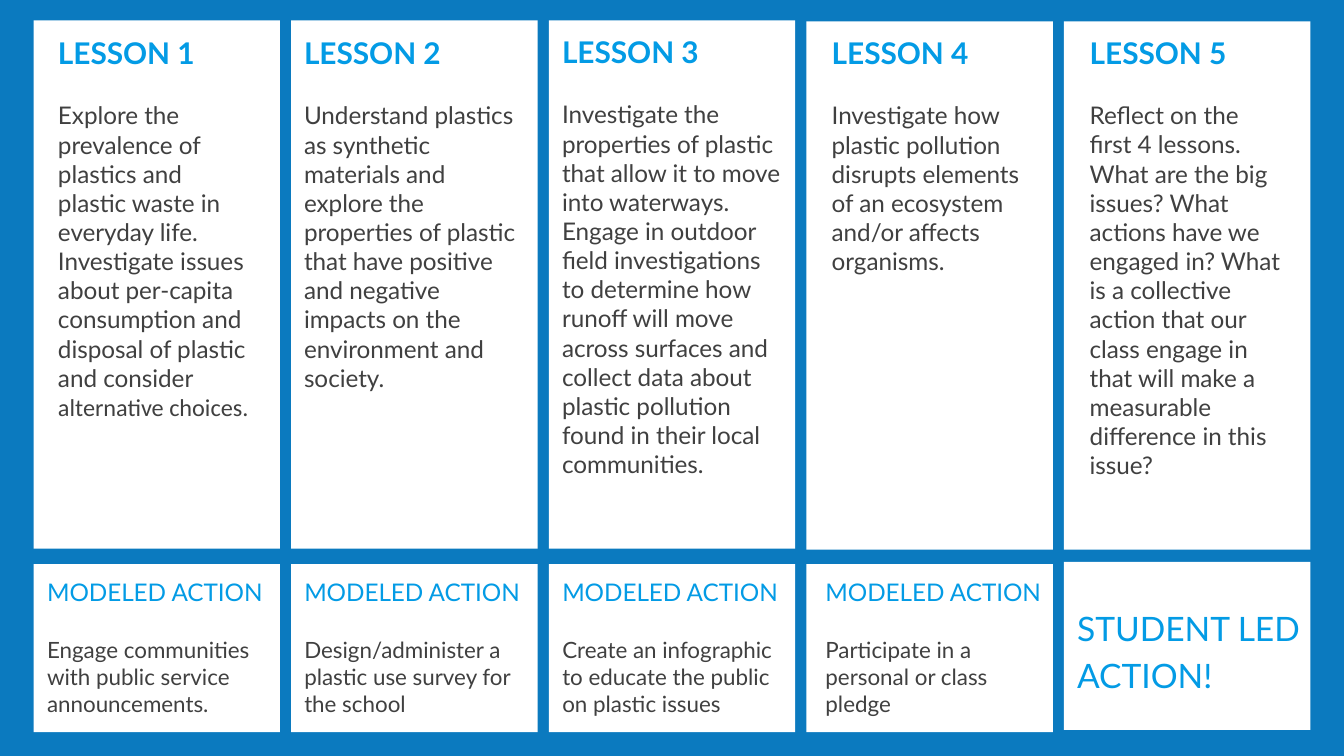
from lxml.etree import SubElement
from pptx import Presentation
from pptx.dml.color import RGBColor
from pptx.enum.shapes import MSO_SHAPE
from pptx.enum.text import MSO_ANCHOR, MSO_AUTO_SIZE, PP_ALIGN
from pptx.oxml.ns import qn
from pptx.util import Pt

theme = {
    "back": RGBColor.from_string("0B7ABF"),
    "card": RGBColor.from_string("FFFFFF"),
    "head": RGBColor.from_string("039BE5"),
    "body": RGBColor.from_string("404040"),
    "font": "Lato",
    "alt": "Calibri",
    "lesson": 16,
    "text": 13,
    "action": 13,
    "note": 12,
    "call": 18,
}
frame_look = {
    "word_wrap": True,
    "auto_size": MSO_AUTO_SIZE.NONE,
    "vertical_anchor": MSO_ANCHOR.TOP,
    **{f"margin_{side}": Pt(7.2) for side in ("left", "top", "right", "bottom")},
}
edges = ("left", "top", "width", "height")


def place(shape, box):
    for edge, size in zip(edges, box):
        setattr(shape, edge, Pt(size))


def write(shape, box, lines):
    place(shape, box)
    tree.append(shape._element)
    frame = shape.text_frame
    for name, value in frame_look.items():
        setattr(frame, name, value)
    for i, (runs, size, tone, bold, gap, lead) in enumerate(lines):
        para = frame.add_paragraph() if i else frame.paragraphs[0]
        look = {"alignment": PP_ALIGN.LEFT, "line_spacing": lead,
                "space_before": Pt(gap), "space_after": Pt(gap)}
        for name, value in look.items():
            setattr(para, name, value)
        props = para._p.get_or_add_pPr()
        props.set("marL", "0")
        props.set("indent", "0")
        SubElement(props, qn("a:buNone"))
        for text, face in runs:
            run = para.add_run()
            run.text = text
            look = {"name": theme[face], "size": Pt(theme[size]), "bold": bold}
            for name, value in look.items():
                setattr(run.font, name, value)
            run.font.color.rgb = theme[tone]


lessons = [
    ((24, 11.5, 119.5, 220), [
        ("Explore the prevalence of plastics and plastic waste in everyday life. "
         "Investigate issues about per-capita consumption and disposal of plastic "
         "and consider ", "font"),
        ("alternative choices.", "alt")]),
    ((155.8, 11.5, 132, 220), [
        ("Understand plastics as synthetic materials and explore the properties of "
         "plastic that have positive and negative impacts on the environment and "
         "society.", "font")]),
    ((294, 11, 132, 283), [
        ("Investigate the properties of plastic that allow it to move into "
         "waterways. Engage in outdoor field investigations to determine how runoff "
         "will move across surfaces and collect data about plastic pollution found "
         "in their local communities.", "font")]),
    ((438.5, 11.5, 119.5, 220), [
        ("Investigate how plastic pollution disrupts elements of an ecosystem "
         "and/or affects organisms.", "font")]),
    ((576.7, 11.5, 119.5, 274), [
        ("Reflect on the first 4 lessons. What are the big issues? What actions "
         "have we engaged in? What is a collective action that our class engage in "
         "that will make a measurable difference in this issue?", "font")]),
]
actions = [
    (18, "Engage communities with public service announcements."),
    (155.8, "Design/administer a plastic use survey for the school"),
    (294, "Create an infographic to educate the public on plastic issues"),
    (435, "Participate in a personal or class pledge"),
]

deck = Presentation()
deck.slide_width, deck.slide_height = Pt(720), Pt(405)
slide = deck.slides.add_slide(deck.slide_layouts.get_by_name("Comparison"))
tree = slide.shapes._spTree
slide.background.fill.solid()
slide.background.fill.fore_color.rgb = theme["back"]
title, *bodies = [hold for hold in slide.placeholders if hold.placeholder_format.idx < 5]

for col in range(5):
    left = 18 + 138 * col
    cards = [(left, 11 if col < 3 else 11.5, 132, 283),
             (left, 302.2 if col < 4 else 301, 132, 90)]
    for box in cards:
        card = slide.shapes.add_shape(MSO_SHAPE.RECTANGLE, *map(Pt, box))
        card.shadow.inherit = False
        card.fill.solid()
        card.fill.fore_color.rgb = theme["card"]
        card.line.fill.background()

for num, (box, runs) in enumerate(lessons, 1):
    note = slide.shapes.add_textbox(*map(Pt, box))
    write(note, box, [([(f"LESSON {num}", "font")], "lesson", "head", True, 0, 1.0),
                      (runs, "text", "body", False, 16, 1.0)])

for hold, (left, text) in zip(bodies, actions):
    write(hold, (left, 302.2, 132, 90),
          [([("MODELED ACTION", "font")], "action", "head", False, 0, 1.0),
           ([(text, "font")], "note", "body", False, 16, 1.0)])

write(title, (569.8, 315.5, 138, 63),
      [([("STUDENT LED ACTION!", "font")], "call", "head", False, 0, 1.15)])

deck.save("out.pptx")
